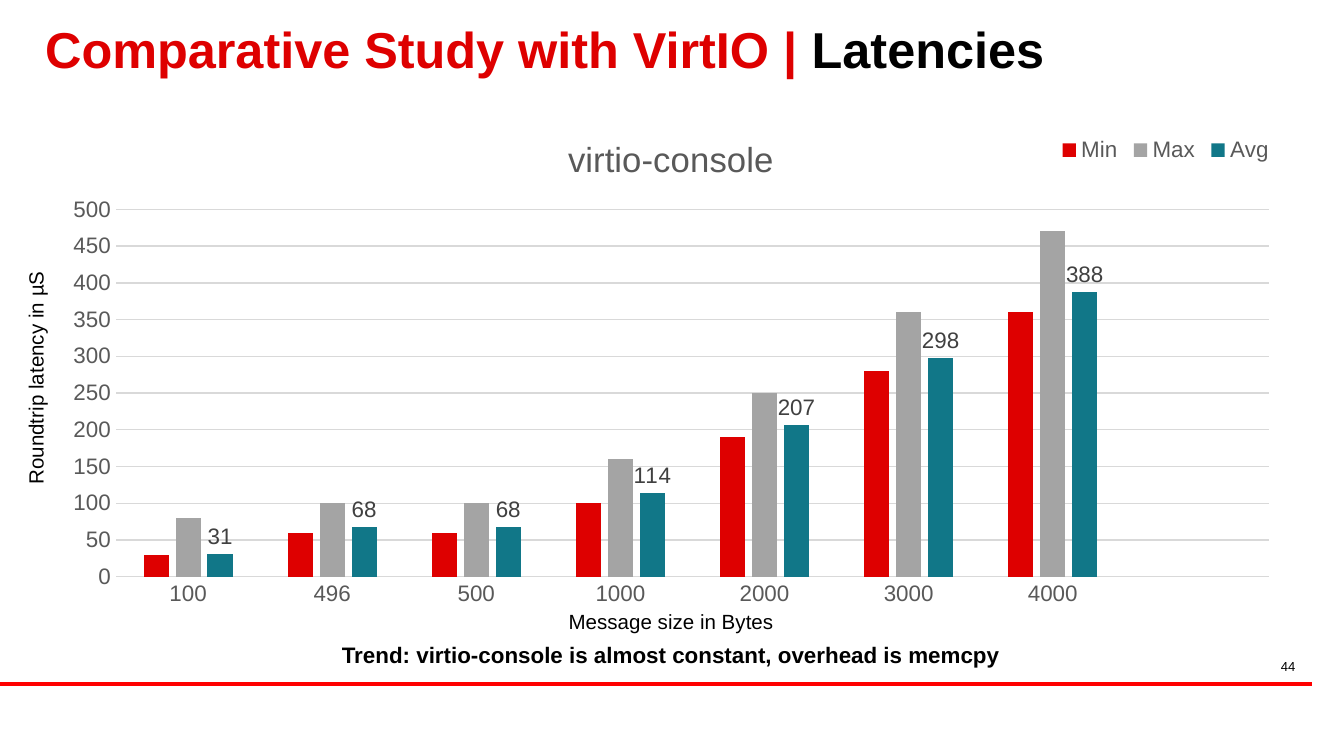
from lxml import etree
from pptx import Presentation
from pptx.chart.data import CategoryChartData
from pptx.dml.color import RGBColor
from pptx.enum.chart import XL_CHART_TYPE, XL_LABEL_POSITION, XL_LEGEND_POSITION, XL_TICK_MARK
from pptx.enum.shapes import MSO_CONNECTOR
from pptx.enum.text import MSO_ANCHOR, PP_ALIGN
from pptx.oxml import parse_xml
from pptx.oxml.ns import nsdecls, qn
from pptx.util import Pt

COLUMNS = XL_CHART_TYPE.COLUMN_CLUSTERED
OUTSIDE = XL_LABEL_POSITION.OUTSIDE_END
BOTTOM = XL_LEGEND_POSITION.BOTTOM
NO_TICK = XL_TICK_MARK.NONE
STRAIGHT = MSO_CONNECTOR.STRAIGHT
MIDDLE = MSO_ANCHOR.MIDDLE
LEFT, CENTER, RIGHT = PP_ALIGN.LEFT, PP_ALIGN.CENTER, PP_ALIGN.RIGHT

COLORS = {
    "black": "000000", "red": "DE0000", "rule": "FF0000", "gray": "A4A4A4",
    "teal": "117788", "axis": "595959", "label": "404040", "grid": "D9D9D9",
}


def set_font(font, size, color, bold=False):
    values = {"name": "Arial", "size": Pt(size), "bold": bold}
    for name, value in values.items():
        setattr(font, name, value)
    font.color.rgb = RGBColor.from_string(COLORS[color])


def place(parent, after, x, y, w=None, h=None, inner=False):
    """Give a chart part a fixed position, in fractions of the chart."""
    for old in parent.findall(qn("c:layout")):
        parent.remove(old)
    layout = parse_xml(f"<c:layout {nsdecls('c')}><c:manualLayout/></c:layout>")
    items = [("layoutTarget", "inner" if inner else None),
             ("xMode", "edge"), ("yMode", "edge"),
             ("x", x), ("y", y), ("w", w), ("h", h)]
    for tag, value in items:
        if value is not None:
            etree.SubElement(layout[0], qn(f"c:{tag}")).set("val", str(value))
    if after:
        parent.find(qn(after)).addnext(layout)
    else:
        parent.insert(0, layout)


prs = Presentation()
prs.slide_width, prs.slide_height = Pt(720), Pt(405)
s = prs.slides.add_slide(prs.slide_layouts[5])

# Red rule at the foot
line = s.shapes.add_connector(STRAIGHT, Pt(0), Pt(366.5), Pt(703), Pt(366.5))
line.line.width = Pt(2.25)
line.line.color.rgb = RGBColor.from_string(COLORS["rule"])
etree.SubElement(line.element.spPr, qn("a:effectLst"))

# Title
sp = s.shapes.title
box = {"left": 17, "top": 4.5, "width": 666, "height": 48}
for name, value in box.items():
    setattr(sp, name, Pt(value))
tf = sp.text_frame
tf.vertical_anchor = MIDDLE
p = tf.paragraphs[0]
p.alignment, p.line_spacing = LEFT, 0.85
for text, color in [("Comparative Study with VirtIO | ", "red"), ("Latencies", "black")]:
    r = p.add_run()
    r.text = text
    set_font(r.font, 27, color, bold=True)

# Latency chart, with an empty last category
series = [
    ("Min", "red", (30, 60, 60, 100, 190, 280, 360, None)),
    ("Max", "gray", (80, 100, 100, 160, 250, 360, 470, None)),
    ("Avg", "teal", (31, 68, 68, 114, 207, 298, 388, None)),
]
data = CategoryChartData()
data.categories = ["100", "496", "500", "1000", "2000", "3000", "4000", ""]
for name, color, values in series:
    data.add_series(name, values)
chart = s.shapes.add_chart(COLUMNS, Pt(25.5), Pt(62.3), Pt(667), Pt(292), data).chart
set_font(chart.font, 10, "black")

plot = chart.plots[0]
plot.gap_width, plot.overlap, plot.vary_by_categories = 219, -27, False
for ser, (name, color, values) in zip(plot.series, series):
    ser.format.fill.solid()
    ser.format.fill.fore_color.rgb = RGBColor.from_string(COLORS[color])
labels = plot.series[2].data_labels
labels.show_value, labels.position = True, OUTSIDE
set_font(labels.font, 12, "label")

# Axes
cat, val = chart.category_axis, chart.value_axis
for axis in (cat, val):
    axis.major_tick_mark = axis.minor_tick_mark = NO_TICK
    set_font(axis.tick_labels.font, 12, "axis")
val.minimum_scale, val.maximum_scale, val.major_unit = 0, 500, 50
val.format.line.fill.background()
for fmt in (cat.format, val.major_gridlines.format):
    fmt.line.width = Pt(0.75)
    fmt.line.color.rgb = RGBColor.from_string(COLORS["grid"])

# Chart title and legend
chart.has_title = True
p = chart.chart_title.text_frame.paragraphs[0]
r = p.add_run()
r.text = "virtio-console"
set_font(r.font, 18.6, "axis")
chart.has_legend = True
chart.legend.position = BOTTOM
chart.legend.include_in_layout = False
set_font(chart.legend.font, 12, "axis")

root = chart.element.find(qn("c:chart"))
place(root.find(qn("c:title")), "c:tx", 0.413, 0.025)
place(root.find(qn("c:legend")), "c:legendPos", 0.808, 0.032, 0.18, 0.06)
place(root.find(qn("c:plotArea")), None, 0.055, 0.171, 0.926, 0.674, inner=True)

# Axis captions, trend line and slide number
texts = [
    ("44", 533, 351, 168, 12, 7, RIGHT, False, 0),
    ("Message size in Bytes", 259.5, 322.5, 200, 21, 11, CENTER, False, 0),
    ("Roundtrip latency in µS", -81, 192, 200, 21, 11, CENTER, False, 270),
    ("Trend: virtio-console is almost constant, overhead is memcpy",
     42, 339.5, 635, 22, 12, CENTER, True, 0),
]
for text, x, y, w, h, size, align, bold, angle in texts:
    sp = s.shapes.add_textbox(Pt(x), Pt(y), Pt(w), Pt(h))
    sp.rotation = angle
    tf = sp.text_frame
    tf.word_wrap, tf.vertical_anchor = True, MIDDLE
    p = tf.paragraphs[0]
    p.alignment = align
    r = p.add_run()
    r.text = text
    set_font(r.font, size, "black", bold)

prs.save("out.pptx")
